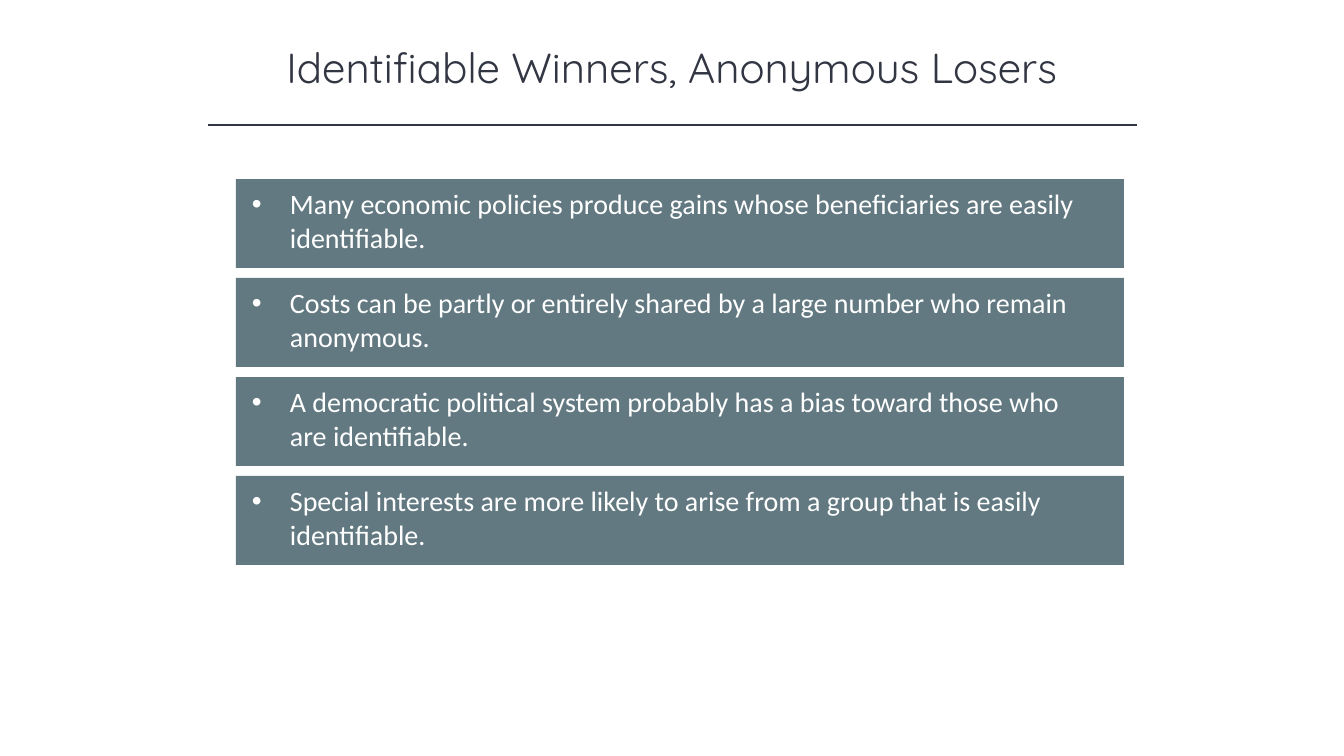
import pptx
import pptx.dml.color
import pptx.enum.shapes
import pptx.enum.text
import pptx.util
from lxml import etree

TITLE = "Identifiable Winners, Anonymous Losers"
POINTS = [
    "Many economic policies produce gains whose beneficiaries are easily identifiable.",
    "Costs can be partly or entirely shared by a large number who remain anonymous.",
    "A democratic political system probably has a bias toward those who are identifiable.",
    "Special interests are more likely to arise from a group that is easily identifiable.",
]

INK = pptx.dml.color.RGBColor(0x32, 0x35, 0x42)
SLATE = pptx.dml.color.RGBColor(0x62, 0x79, 0x81)
WHITE = pptx.dml.color.RGBColor(0xFF, 0xFF, 0xFF)

# Lengths in px
SLIDE_W, SLIDE_H = 1344, 756
TITLE_BOX = (168, 37, 1008, 61)
RULE_X1, RULE_X2, RULE_Y = 208, 1137, 125
BAR_X, BAR_Y, BAR_W, BAR_H = 236, 179, 888, 89
BAR_PITCH = 99
TEXT_DX, TEXT_DY, TEXT_W, TEXT_H = 6, 3, 861, 78
BULLET_INDENT = 38


def px(n):
    return round(n * 914400 / 100.8)


def add_text(shapes, box, text, font, size, color):
    """Add a wrapping one-paragraph text box; return it and its paragraph."""
    s = shapes.add_textbox(*map(px, box))
    tf = s.text_frame
    tf.word_wrap = True
    tf.text = text
    p = tf.paragraphs[0]
    r = p.runs[0]
    r.font.name = font
    r.font.size = pptx.util.Pt(size)
    r.font.color.rgb = color
    return s, p


def set_bullet(p):
    pPr = p._p.get_or_add_pPr()
    pPr.set("marL", str(px(BULLET_INDENT)))
    pPr.set("indent", str(-px(BULLET_INDENT)))
    ns = pptx.oxml.ns.qn
    etree.SubElement(pPr, ns("a:buFont")).set("typeface", "Arial")
    etree.SubElement(pPr, ns("a:buChar")).set("char", "•")


def add_title(slide):
    _, p = add_text(slide.shapes, TITLE_BOX, TITLE, "Quicksand", 30, INK)
    p.alignment = pptx.enum.text.PP_ALIGN.CENTER
    rule = slide.shapes.add_connector(
        pptx.enum.shapes.MSO_CONNECTOR.STRAIGHT,
        px(RULE_X1), px(RULE_Y), px(RULE_X2), px(RULE_Y))
    rule.line.color.rgb = INK
    rule.line.width = pptx.util.Pt(1)
    etree.SubElement(rule._element.spPr, pptx.oxml.ns.qn("a:effectLst"))


def add_bar(slide, y, text):
    group = slide.shapes.add_group_shape()
    bar = group.shapes.add_shape(
        pptx.enum.shapes.MSO_SHAPE.RECTANGLE,
        px(BAR_X), px(y), px(BAR_W), px(BAR_H))
    bar.shadow.inherit = False
    bar.line.fill.background()
    box = (BAR_X + TEXT_DX, y + TEXT_DY, TEXT_W, TEXT_H)
    label, p = add_text(group.shapes, box, text, "Calibri", 20, WHITE)
    set_bullet(p)
    for s in (bar, label):
        s.fill.solid()
        s.fill.fore_color.rgb = SLATE


def main():
    prs = pptx.Presentation()
    prs.slide_width, prs.slide_height = px(SLIDE_W), px(SLIDE_H)
    slide = prs.slides.add_slide(prs.slide_layouts[6])
    add_title(slide)
    for i, text in enumerate(POINTS):
        add_bar(slide, BAR_Y + i * BAR_PITCH, text)
    prs.save("out.pptx")


if __name__ == "__main__":
    main()
